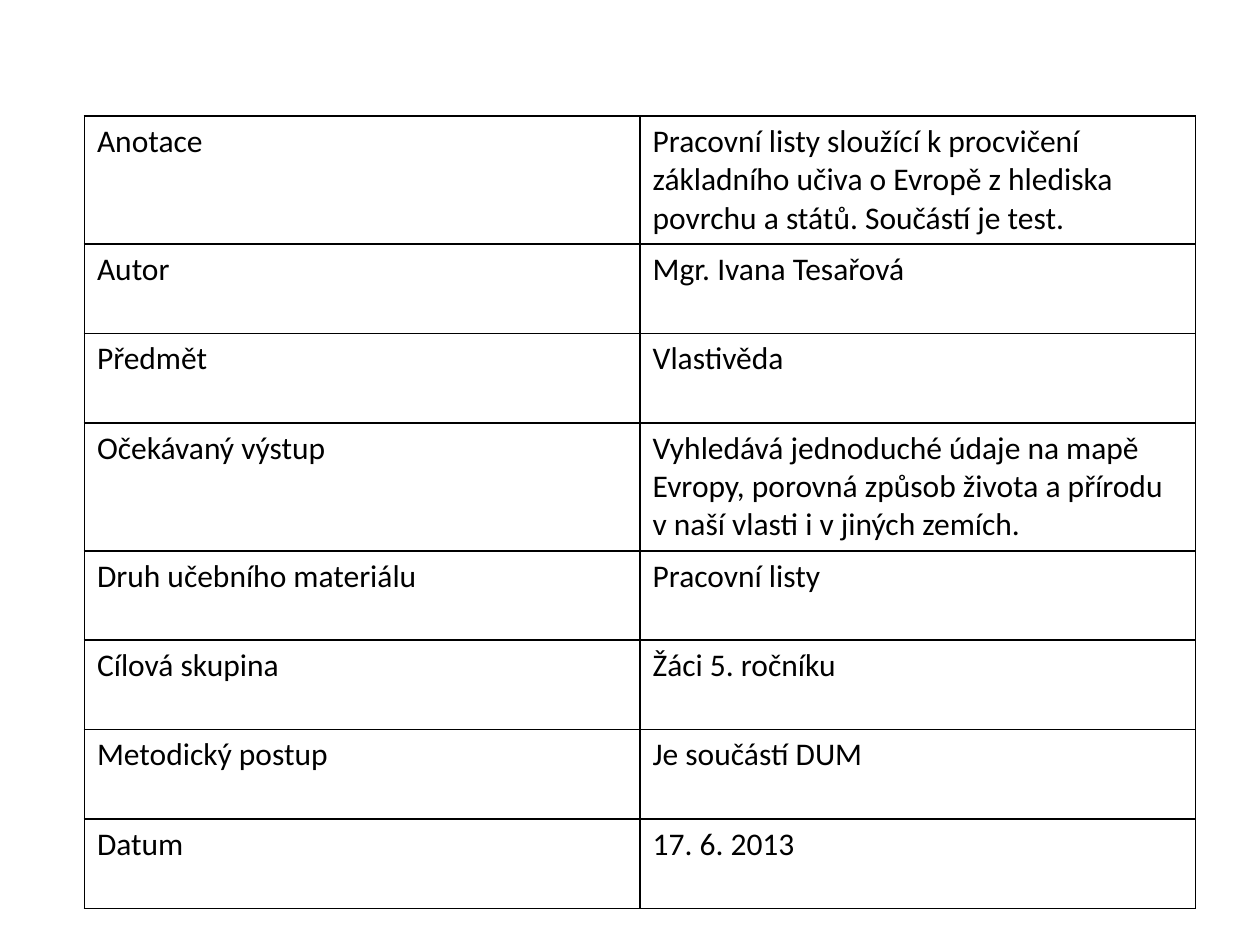
from lxml.etree import SubElement
from pptx import Presentation
from pptx.dml.color import RGBColor
from pptx.oxml.ns import qn
from pptx.util import Inches, Pt

BLACK = RGBColor(0x00, 0x00, 0x00)
WHITE = RGBColor(0xFF, 0xFF, 0xFF)
FONT = "Calibri"

DETAILS = [
    ("Anotace", "Pracovní listy sloužící k procvičení základního učiva "
                "o Evropě z hlediska povrchu a států. Součástí je test."),
    ("Autor", "Mgr. Ivana Tesařová"),
    ("Předmět", "Vlastivěda"),
    ("Očekávaný výstup", "Vyhledává jednoduché údaje na mapě Evropy, porovná "
                         "způsob života a přírodu v naší vlasti i v jiných zemích."),
    ("Druh učebního materiálu", "Pracovní listy"),
    ("Cílová skupina", "Žáci 5. ročníku"),
    ("Metodický postup", "Je součástí DUM"),
    ("Datum", "17. 6. 2013"),
]


def set_borders(cell, color, width):
    """Outline a cell; call before filling it, as lines precede the fill in XML."""
    properties = cell._tc.get_or_add_tcPr()
    for side in ("a:lnL", "a:lnR", "a:lnT", "a:lnB"):
        line = SubElement(properties, qn(side), w=str(width))
        fill = SubElement(line, qn("a:solidFill"))
        SubElement(fill, qn("a:srgbClr"), val=str(color))


def write_cell(cell, text):
    set_borders(cell, BLACK, Pt(1))
    cell.fill.solid()
    cell.fill.fore_color.rgb = WHITE
    span = cell.text_frame.paragraphs[0].add_run()
    span.text = text
    span.font.name = FONT
    span.font.size = Pt(18)
    span.font.bold = False
    span.font.color.rgb = BLACK


def add_details_table(page, left, top, width, row_height):
    """Rows with long text grow beyond row_height when drawn."""
    frame = page.shapes.add_table(len(DETAILS), 2, left, top,
                                  width, row_height * len(DETAILS))
    table = frame.table
    table.first_row = False
    table.horz_banding = False
    for column in table.columns:
        column.width = width // 2
    for row, texts in zip(table.rows, DETAILS):
        row.height = row_height
        for cell, text in zip(row.cells, texts):
            write_cell(cell, text)


def main():
    deck = Presentation()
    deck.slide_width = Inches(10)
    deck.slide_height = Inches(7.5)
    page = deck.slides.add_slide(deck.slide_layouts[6])
    add_details_table(page, Inches(0.67), Inches(0.92), Inches(8.82), Inches(0.71))
    deck.save("out.pptx")


if __name__ == "__main__":
    main()
